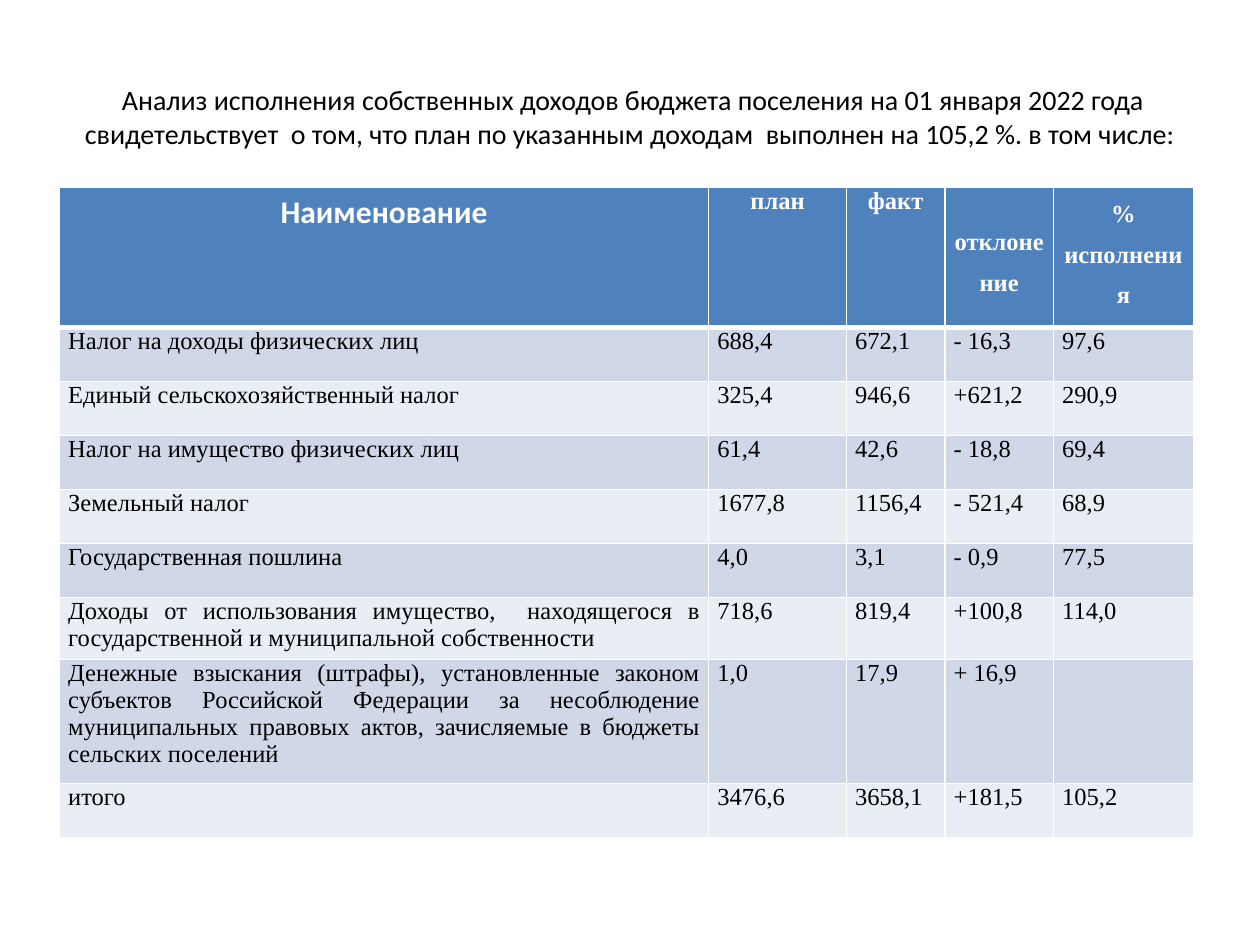
import pptx
import pptx.dml.color
import pptx.enum.text
import pptx.oxml
import pptx.oxml.ns
import pptx.util

Pt = pptx.util.Pt
ALIGN = pptx.enum.text.PP_ALIGN
ANCHOR = pptx.enum.text.MSO_ANCHOR

TITLE = (
    " Анализ исполнения собственных доходов бюджета поселения на 01 января 2022 года "
    "свидетельствует  о том, что план по указанным доходам  выполнен на 105,2 %. в том числе:"
)
HEADERS = ["Наименование", "план", "факт", "отклонение", "%\nисполнения"]
ROWS = [
    ["Налог на доходы физических лиц", "688,4", "672,1", "- 16,3", "97,6"],
    ["Единый сельскохозяйственный налог", "325,4", "946,6", "+621,2", "290,9"],
    ["Налог на имущество физических лиц", "61,4", "42,6", "- 18,8", "69,4"],
    ["Земельный налог", "1677,8", "1156,4", "- 521,4", "68,9"],
    ["Государственная пошлина", "4,0", "3,1", "- 0,9", "77,5"],
    ["Доходы от использования имущество,  находящегося в государственной "
     "и муниципальной собственности", "718,6", "819,4", "+100,8", "114,0"],
    ["Денежные взыскания (штрафы), установленные законом субъектов Российской "
     "Федерации за несоблюдение муниципальных правовых актов, зачисляемые в бюджеты "
     "сельских поселений", "1,0", "17,9", "+ 16,9", ""],
    ["итого", "3476,6", "3658,1", "+181,5", "105,2"],
]

COLORS = {
    "text": "000000",
    "header": "4F81BD",
    "header_text": "FFFFFF",
    "bands": ("D0D8E8", "E9EDF4"),
    "border": "FFFFFF",
}
TITLE_BOX = {"left": Pt(36), "top": Pt(21.6), "width": Pt(648), "height": Pt(90)}
TABLE_LEFT, TABLE_TOP = 34, 107
COLUMN_WIDTHS = [371, 78.7, 56.3, 62, 80]
HEADER_HEIGHT, ROW_HEIGHT = 80, 30.9
TALL_ROWS = {6: 35.4, 7: 71}

TITLE_FONT = {"name": "Calibri", "size": Pt(16), "bold": False}
NAME_HEADER_FONT = {"name": "Calibri", "size": Pt(18), "bold": True}
HEADER_FONT = {"name": "Times New Roman", "size": Pt(14), "bold": True}
BODY_FONT = {"name": "Times New Roman", "size": Pt(14), "bold": False}
CELL_MARGINS = {"margin_left": Pt(5), "margin_right": Pt(5),
                "margin_top": Pt(0), "margin_bottom": Pt(0)}
DEVIATION_MARGINS = {**CELL_MARGINS, "margin_top": Pt(16)}


def set_attributes(target, values):
    for name, value in values.items():
        setattr(target, name, value)


def rgb(color):
    return pptx.dml.color.RGBColor.from_string(color)


def write_text(frame, text, font, color, **paragraph_format):
    frame.text = text
    for paragraph in frame.paragraphs:
        set_attributes(paragraph, paragraph_format)
        for target in [paragraph.font] + [run.font for run in paragraph.runs]:
            set_attributes(target, font)
            target.color.rgb = rgb(color)


def set_borders(cell, bottom_width):
    """Put the border lines ahead of the fill, as the schema demands."""
    properties = cell._tc.get_or_add_tcPr()
    widths = {"lnL": 1, "lnR": 1, "lnT": 1, "lnB": bottom_width}
    for position, (tag, width) in enumerate(widths.items()):
        line = pptx.oxml.parse_xml(
            f'<a:{tag} {pptx.oxml.ns.nsdecls("a")} w="{Pt(width)}"><a:solidFill>'
            f'<a:srgbClr val="{COLORS["border"]}"/></a:solidFill></a:{tag}>'
        )
        properties.insert(position, line)


def format_cell(cell, fill, bottom_width=1):
    cell.fill.solid()
    cell.fill.fore_color.rgb = rgb(fill)
    set_borders(cell, bottom_width)


def add_title(slide):
    title = slide.shapes.title
    set_attributes(title, TITLE_BOX)
    title.text_frame.vertical_anchor = ANCHOR.MIDDLE
    write_text(title.text_frame, TITLE, TITLE_FONT, COLORS["text"], alignment=ALIGN.CENTER)


def add_income_table(slide):
    heights = [HEADER_HEIGHT] + [
        TALL_ROWS.get(number, ROW_HEIGHT) for number in range(1, len(ROWS) + 1)
    ]
    table = slide.shapes.add_table(
        len(heights), len(HEADERS), Pt(TABLE_LEFT), Pt(TABLE_TOP),
        Pt(sum(COLUMN_WIDTHS)), Pt(sum(heights)),
    ).table
    for column, width in zip(table.columns, COLUMN_WIDTHS):
        column.width = Pt(width)
    for row, height in zip(table.rows, heights):
        row.height = Pt(height)

    for index, text in enumerate(HEADERS):
        cell = table.cell(0, index)
        if index:
            set_attributes(cell, DEVIATION_MARGINS if text == "отклонение" else CELL_MARGINS)
        write_text(cell.text_frame, text, HEADER_FONT if index else NAME_HEADER_FONT,
                   COLORS["header_text"], alignment=ALIGN.CENTER,
                   line_spacing=1.5 if index >= 3 else 1.0)
        format_cell(cell, COLORS["header"], bottom_width=3)

    for row_index, values in enumerate(ROWS):
        for column_index, text in enumerate(values):
            cell = table.cell(row_index + 1, column_index)
            set_attributes(cell, CELL_MARGINS)
            write_text(cell.text_frame, text, BODY_FONT, COLORS["text"],
                       alignment=ALIGN.JUSTIFY)
            format_cell(cell, COLORS["bands"][row_index % 2])


def main():
    presentation = pptx.Presentation()
    set_attributes(presentation, {"slide_width": Pt(720), "slide_height": Pt(540)})
    slide = presentation.slides.add_slide(presentation.slide_layouts.get_by_name("Title Only"))
    add_title(slide)
    add_income_table(slide)
    presentation.save("out.pptx")


if __name__ == "__main__":
    main()
